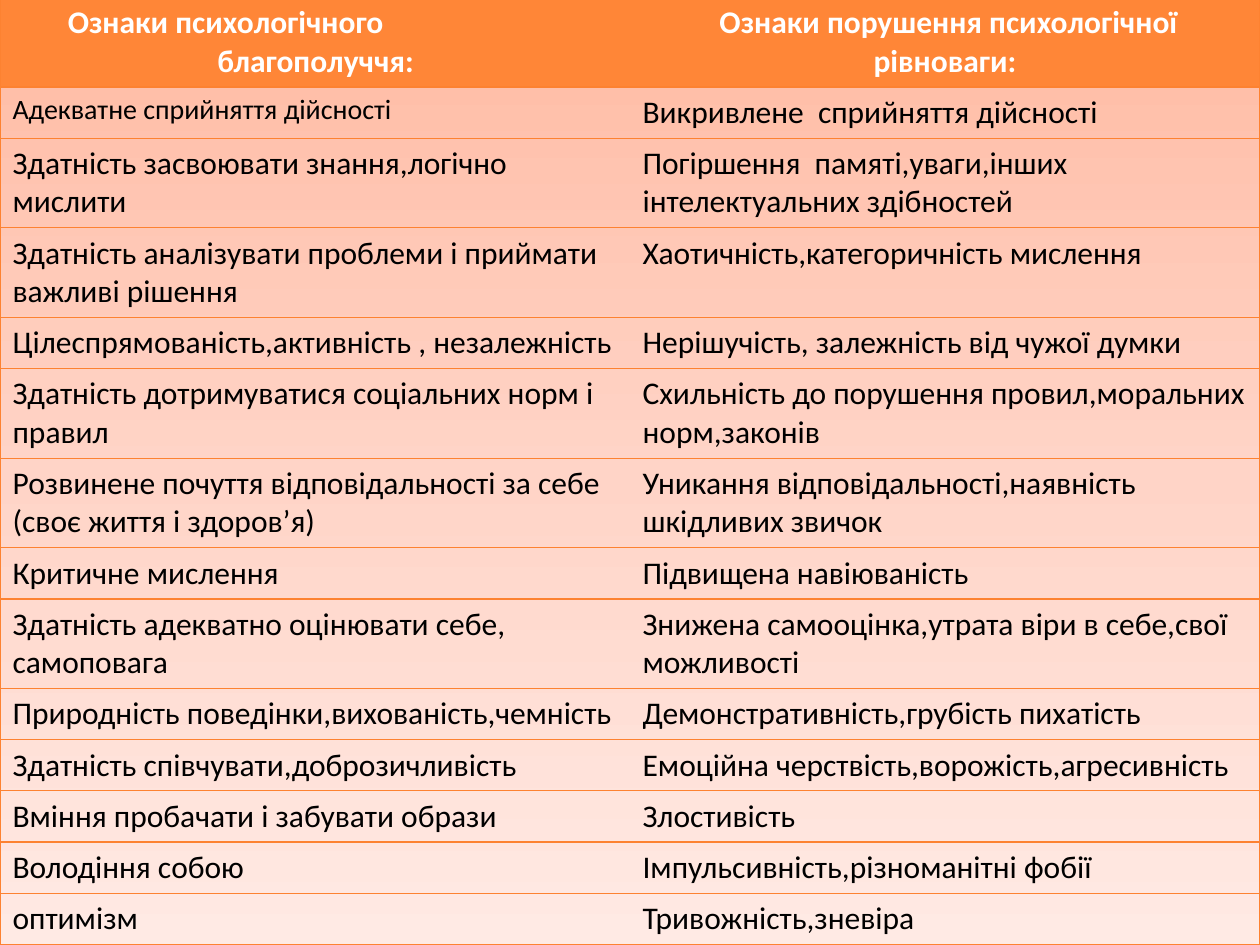
from copy import deepcopy
from dataclasses import dataclass

from lxml import etree
from pptx import Presentation
from pptx.dml.color import RGBColor
from pptx.enum.text import PP_ALIGN
from pptx.oxml.ns import qn
from pptx.util import Pt

CENTER, LEFT = PP_ALIGN.CENTER, PP_ALIGN.LEFT
BLANK_LAYOUT = 6


@dataclass(frozen=True)
class Theme:
    font: str = "Calibri"
    text_size: float = 18
    small_size: float = 16
    header_text: str = "FFFFFF"
    body_text: str = "000000"
    header_fill: str = "FF8637"
    border: str = "FD8231"
    border_width: float = 0.75
    background: tuple = ((0, "FFBBA3"), (0.5, "FFD4C7"), (1, "FFEAE4"))


THEME = Theme()
SLIDE_WIDTH, SLIDE_HEIGHT = 720, 540
TABLE_TOP = -1.5
ONE_LINE, TWO_LINES = 29.25, 51.25

HEADERS = (
    "Ознаки психологічного\vблагополуччя:",
    " Ознаки порушення психологічної рівноваги:",
)
# Sign of well-being, sign of lost balance, row height
SIGNS = (
    ("Адекватне сприйняття дійсності", "Викривлене  сприйняття дійсності", ONE_LINE),
    ("Здатність засвоювати знання,логічно мислити",
     "Погіршення  памяті,уваги,інших інтелектуальних здібностей", TWO_LINES),
    ("Здатність аналізувати проблеми і приймати важливі рішення",
     "Хаотичність,категоричність мислення", TWO_LINES),
    ("Цілеспрямованість,активність , незалежність",
     "Нерішучість, залежність від чужої думки", ONE_LINE),
    ("Здатність дотримуватися соціальних норм і правил",
     "Схильність до порушення провил,моральних норм,законів", TWO_LINES),
    ("Розвинене почуття відповідальності за себе (своє життя і здоров’я)",
     "Уникання відповідальності,наявність шкідливих звичок", TWO_LINES),
    ("Критичне мислення", "Підвищена навіюваність", ONE_LINE),
    ("Здатність адекватно оцінювати себе, самоповага",
     "Знижена самооцінка,утрата віри в себе,свої можливості", TWO_LINES),
    ("Природність поведінки,вихованість,чемність",
     "Демонстративність,грубість пихатість", ONE_LINE),
    ("Здатність співчувати,доброзичливість",
     "Емоційна черствість,ворожість,агресивність", ONE_LINE),
    ("Вміння пробачати і забувати образи", "Злостивість", ONE_LINE),
    ("Володіння собою", "Імпульсивність,різноманітні фобії", ONE_LINE),
    ("оптимізм", "Тривожність,зневіра", ONE_LINE),
)


def paint_background(slide):
    fill = slide.background.fill
    fill.gradient()
    fill.gradient_angle = 270
    stop_list = slide.element.find(".//" + qn("a:gsLst"))
    stop_list.append(deepcopy(stop_list[-1]))
    for stop, (position, color) in zip(fill.gradient_stops, THEME.background):
        stop.position = position
        stop.color.rgb = RGBColor.from_string(color)


def set_borders(cell, outer_side):
    """Rule the cell above, below and on its outer side only."""
    properties = cell._tc.get_or_add_tcPr()
    for side in ("lnL", "lnR", "lnT", "lnB"):
        line = etree.SubElement(properties, qn("a:" + side), w=str(Pt(THEME.border_width)))
        if side in (outer_side, "lnT", "lnB"):
            solid = etree.SubElement(line, qn("a:solidFill"))
            etree.SubElement(solid, qn("a:srgbClr"), val=THEME.border)
        else:
            etree.SubElement(line, qn("a:noFill"))


def write_cell(cell, text, size, color, bold=False, align=LEFT):
    paragraph = cell.text_frame.paragraphs[0]
    paragraph.alignment = align
    for index, line in enumerate(text.split("\v")):
        if index:
            paragraph.add_line_break()
        run = paragraph.add_run()
        run.text = line
        run.font.name = THEME.font
        run.font.size = Pt(size)
        run.font.bold = bold
        run.font.color.rgb = RGBColor.from_string(color)


def hang_first_line(cell, first, rest):
    """Start the first line at one indent and the following lines at another."""
    paragraph = cell.text_frame.paragraphs[0]
    paragraph.alignment = LEFT
    properties = paragraph._p.get_or_add_pPr()
    properties.set("marL", str(Pt(rest)))
    properties.set("indent", str(Pt(first - rest)))


def add_signs_table(slide):
    rows = [(*HEADERS, TWO_LINES), *SIGNS]
    total_height = sum(height for *_, height in rows)
    table = slide.shapes.add_table(
        len(rows), len(HEADERS), Pt(0), Pt(TABLE_TOP), Pt(SLIDE_WIDTH), Pt(total_height)
    ).table
    table.horz_banding = False
    for row_index, (*texts, height) in enumerate(rows):
        table.rows[row_index].height = Pt(height)
        for column, (text, outer_side) in enumerate(zip(texts, ("lnL", "lnR"))):
            cell = table.cell(row_index, column)
            set_borders(cell, outer_side)
            if row_index == 0:
                cell.fill.solid()
                cell.fill.fore_color.rgb = RGBColor.from_string(THEME.header_fill)
                write_cell(cell, text, THEME.text_size, THEME.header_text, True, CENTER)
            else:
                cell.fill.background()
                is_small = (row_index, column) == (1, 0)
                size = THEME.small_size if is_small else THEME.text_size
                write_cell(cell, text, size, THEME.body_text)
    hang_first_line(table.cell(0, 0), first=31.5, rest=117)


def main():
    presentation = Presentation()
    presentation.slide_width = Pt(SLIDE_WIDTH)
    presentation.slide_height = Pt(SLIDE_HEIGHT)
    slide = presentation.slides.add_slide(presentation.slide_layouts[BLANK_LAYOUT])
    paint_background(slide)
    add_signs_table(slide)
    presentation.save("out.pptx")


if __name__ == "__main__":
    main()
